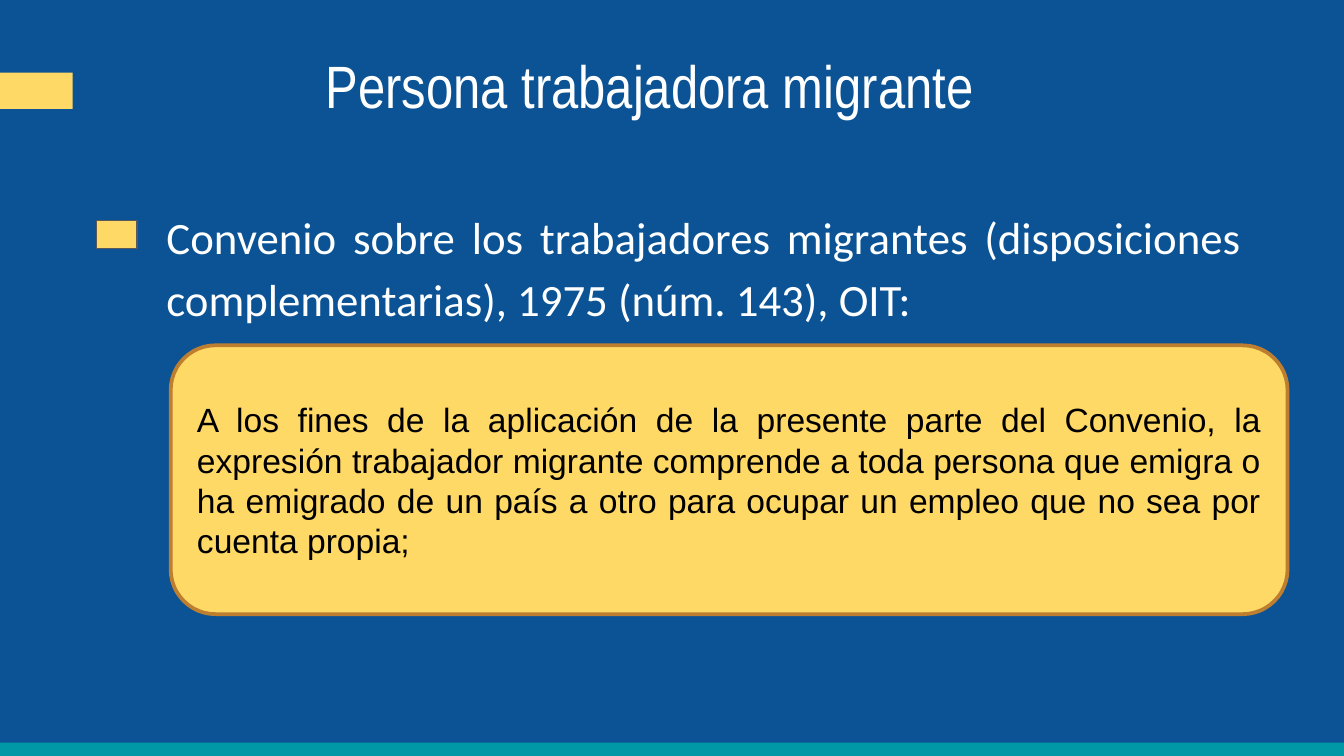
from pptx import Presentation
from pptx.dml.color import RGBColor
from pptx.enum.shapes import MSO_SHAPE
from pptx.enum.text import MSO_ANCHOR, PP_ALIGN
from pptx.util import Inches, Pt

RECTANGLE = MSO_SHAPE.RECTANGLE
ROUNDED = MSO_SHAPE.ROUNDED_RECTANGLE
TOP, MIDDLE = MSO_ANCHOR.TOP, MSO_ANCHOR.MIDDLE
CENTER, JUSTIFY = PP_ALIGN.CENTER, PP_ALIGN.JUSTIFY

WIDTH = 10
HEIGHT = WIDTH * 9 / 16
FOOTER_HEIGHT = 0.1

COLORS = {
    "background": "0B5394",
    "yellow": "FFD966",
    "teal": "0097A7",
    "brown": "BD7F2F",
    "gray": "595959",
    "white": "FFFFFF",
    "black": "000000",
}

TITLE = "Persona trabajadora migrante"
CONVENTION = (
    "Convenio sobre los trabajadores migrantes (disposiciones "
    "complementarias), 1975 (núm. 143), OIT:"
)
DEFINITION = (
    "A los fines de la aplicación de la presente parte del Convenio, la "
    "expresión trabajador migrante comprende a toda persona que emigra o ha "
    "emigrado de un país a otro para ocupar un empleo que no sea por cuenta propia;"
)


def color(name):
    """Return the named colour."""
    return RGBColor.from_string(COLORS[name])


def set_attributes(target, values):
    """Set each attribute of the target from a dict."""
    for name, value in values.items():
        setattr(target, name, value)


def write_text(shape, text, font, size, font_color, align, spacing=1.0, anchor=TOP):
    """Write one formatted paragraph into a shape."""
    margin = Inches(0.1)
    frame = shape.text_frame
    set_attributes(frame, {
        "word_wrap": True,
        "vertical_anchor": anchor,
        "margin_left": margin,
        "margin_right": margin,
        "margin_top": margin,
        "margin_bottom": margin,
    })
    paragraph = frame.paragraphs[0]
    set_attributes(paragraph, {"alignment": align, "line_spacing": spacing})
    run = paragraph.add_run()
    run.text = text
    set_attributes(run.font, {"name": font, "size": Pt(size)})
    run.font.color.rgb = color(font_color)


def add_text(slide, box, *text_format):
    """Add a text box holding one paragraph."""
    shape = slide.shapes.add_textbox(*map(Inches, box))
    write_text(shape, *text_format)


def add_block(slide, kind, box, fill, line=None, width=0):
    """Add a filled shape with an optional outline."""
    shape = slide.shapes.add_shape(kind, *map(Inches, box))
    shape.shadow.inherit = False
    shape.fill.solid()
    shape.fill.fore_color.rgb = color(fill)
    if line:
        shape.line.color.rgb = color(line)
        shape.line.width = Pt(width)
    else:
        shape.line.fill.background()
    return shape


def main():
    """Build and save the slide."""
    presentation = Presentation()
    set_attributes(presentation, {
        "slide_width": Inches(WIDTH),
        "slide_height": Inches(HEIGHT),
    })
    slide = presentation.slides.add_slide(presentation.slide_layouts[6])
    slide.background.fill.solid()
    slide.background.fill.fore_color.rgb = color("background")

    add_text(slide, (0.74, 0.32, 8.19, 0.97),
             TITLE, "Arial Narrow", 32, "white", CENTER, 0.9)
    add_text(slide, (1.14, 1.4, 8.19, 3.58),
             CONVENTION, "Calibri", 24, "white", JUSTIFY, 1.15)
    add_block(slide, RECTANGLE, (0.72, 1.64, 0.3, 0.21), "yellow", "gray", 0.75)
    add_block(slide, RECTANGLE, (-0.11, 0.54, 0.65, 0.27), "yellow")
    add_block(slide, RECTANGLE, (0, HEIGHT - FOOTER_HEIGHT, WIDTH, FOOTER_HEIGHT), "teal")
    definition_box = add_block(slide, ROUNDED, (1.27, 2.57, 8.31, 2), "yellow", "brown", 2)
    write_text(definition_box, DEFINITION, "Arial", 18, "black", JUSTIFY, anchor=MIDDLE)

    presentation.save("out.pptx")


if __name__ == "__main__":
    main()
